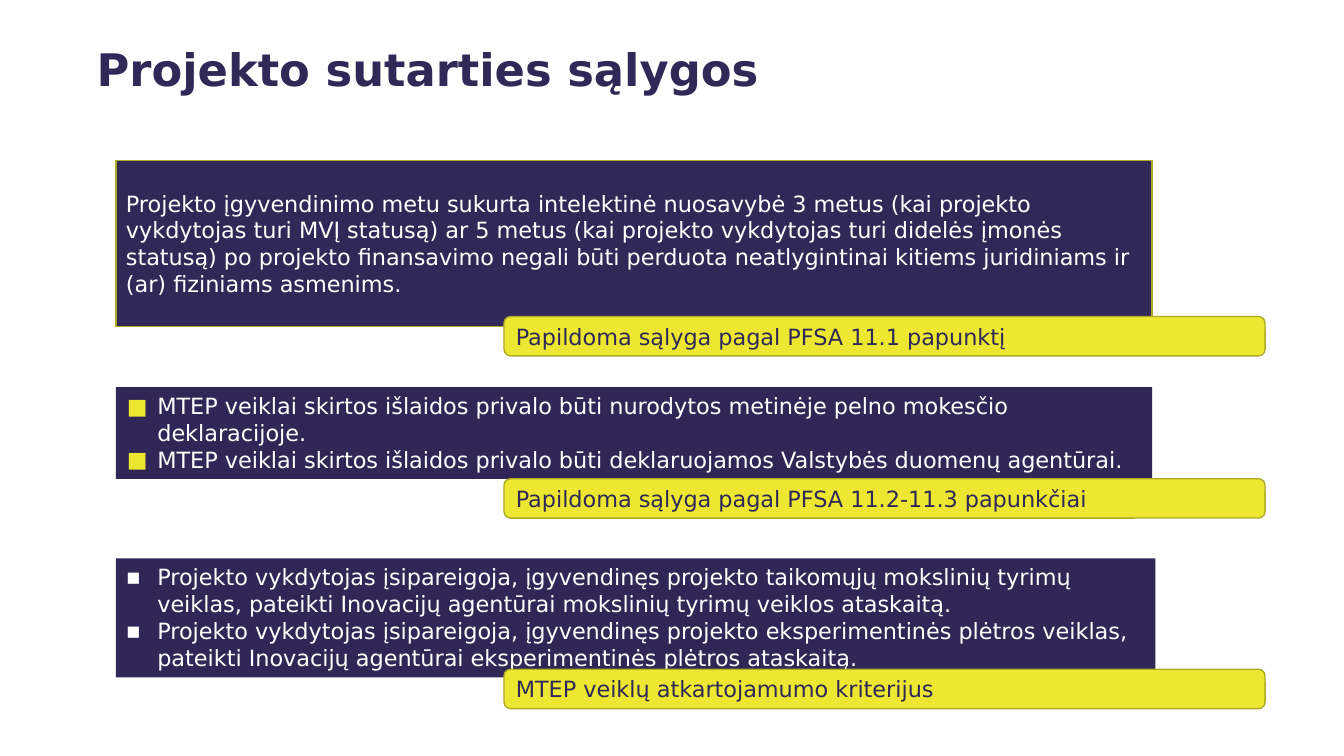
"""Build the slide on the project contract conditions."""
from dataclasses import dataclass

from lxml.etree import SubElement
from pptx import Presentation
from pptx.dml.color import RGBColor
from pptx.enum.shapes import MSO_SHAPE as Preset
from pptx.enum.text import MSO_ANCHOR as Anchor, MSO_AUTO_SIZE as AutoSize, PP_ALIGN as Align
from pptx.oxml.ns import qn
from pptx.util import Inches, Pt


@dataclass(frozen=True)
class Theme:
    font: str = "DejaVu Sans"
    navy: str = "302957"
    list_navy: str = "302757"
    yellow: str = "EDE731"
    bullet_yellow: str = "EDE630"
    olive: str = "AFAA24"
    white: str = "FFFFFF"
    title_size: int = 32
    body_size: int = 16
    line_width: int = 1
    bullet: str = "▪"
    large_bullet: int = 150


class SlideBuilder:
    PANEL_LEFT, PANEL_WIDTH = 8.63, 77.1
    TAG_LEFT, TAG_WIDTH, TAG_HEIGHT = 37.5, 56.63, 5.2
    INDENT = 2.34

    def __init__(self, presentation, theme):
        self.theme = theme
        self.width = presentation.slide_width
        self.height = presentation.slide_height
        self.slide = presentation.slides.add_slide(presentation.slide_layouts[6])

    def across(self, percent):
        return round(self.width * percent / 100)

    def box(self, left, top, width, height):
        return (self.across(left), round(self.height * top / 100),
                self.across(width), round(self.height * height / 100))

    def add_text(self, shape, texts, color, size, bold=False, anchor=Anchor.MIDDLE):
        frame = shape.text_frame
        frame.word_wrap = True
        frame.vertical_anchor = anchor
        for index, text in enumerate(texts):
            paragraph = frame.add_paragraph() if index else frame.paragraphs[0]
            paragraph.alignment = Align.LEFT
            run = paragraph.add_run()
            run.text = text
            run.font.name = self.theme.font
            run.font.size = Pt(size)
            run.font.bold = bold
            run.font.color.rgb = RGBColor.from_string(color)
        return frame

    def block(self, preset, area, fill, line=None):
        shape = self.slide.shapes.add_shape(preset, *self.box(*area))
        shape.shadow.inherit = False
        shape.fill.solid()
        shape.fill.fore_color.rgb = RGBColor.from_string(fill)
        if line:
            shape.line.color.rgb = RGBColor.from_string(line)
            shape.line.width = Pt(self.theme.line_width)
        else:
            shape.line.fill.background()
        return shape

    def add_bullet(self, paragraph, color, percent):
        properties = paragraph._p.get_or_add_pPr()
        indent = self.across(self.INDENT)
        properties.set("marL", str(indent))
        properties.set("indent", str(-indent))
        tint = SubElement(properties, qn("a:buClr"))
        SubElement(tint, qn("a:srgbClr"), val=color)
        SubElement(properties, qn("a:buSzPct"), val=str(percent * 1000))
        SubElement(properties, qn("a:buFont"), typeface=self.theme.font)
        SubElement(properties, qn("a:buChar"), char=self.theme.bullet)

    def title(self, text):
        shape = self.slide.shapes.add_textbox(*self.box(6.45, 2.67, 88.95, 12.8))
        self.add_text(shape, [text], self.theme.navy, self.theme.title_size, bold=True)

    def statement(self, top, height, text):
        area = self.PANEL_LEFT, top, self.PANEL_WIDTH, height
        shape = self.block(Preset.RECTANGLE, area, self.theme.navy, self.theme.olive)
        self.add_text(shape, [text], self.theme.white, self.theme.body_size)

    def bullet_list(self, top, height, texts, color, percent=100, width=PANEL_WIDTH):
        area = self.PANEL_LEFT, top, width, height
        shape = self.block(Preset.RECTANGLE, area, self.theme.list_navy)
        frame = self.add_text(shape, texts, self.theme.white, self.theme.body_size,
                              anchor=Anchor.TOP)
        frame.auto_size = AutoSize.SHAPE_TO_FIT_TEXT
        for paragraph in frame.paragraphs:
            self.add_bullet(paragraph, color, percent)

    def tag(self, top, text):
        area = self.TAG_LEFT, top, self.TAG_WIDTH, self.TAG_HEIGHT
        shape = self.block(Preset.ROUNDED_RECTANGLE, area, self.theme.yellow, self.theme.olive)
        self.add_text(shape, [text], self.theme.navy, self.theme.body_size)


def main():
    presentation = Presentation()
    presentation.slide_width = Inches(13.33)
    presentation.slide_height = Inches(7.5)
    theme = Theme()
    builder = SlideBuilder(presentation, theme)

    builder.title("Projekto sutarties sąlygos")
    builder.statement(
        21.2, 22,
        "Projekto įgyvendinimo metu sukurta intelektinė nuosavybė 3 metus (kai projekto "
        "vykdytojas turi MVĮ statusą) ar 5 metus (kai projekto vykdytojas turi didelės įmonės "
        "statusą) po projekto finansavimo negali būti perduota neatlygintinai kitiems "
        "juridiniams ir (ar) fiziniams asmenims.")
    builder.tag(41.87, "Papildoma sąlyga pagal PFSA 11.1 papunktį")
    builder.bullet_list(
        51.2, 12.13,
        ["MTEP veiklai skirtos išlaidos privalo būti nurodytos metinėje pelno mokesčio "
         "deklaracijoje.",
         "MTEP veiklai skirtos išlaidos privalo būti deklaruojamos Valstybės duomenų "
         "agentūrai."],
        theme.bullet_yellow, theme.large_bullet)
    builder.tag(63.33, "Papildoma sąlyga pagal PFSA 11.2-11.3 papunkčiai")
    builder.bullet_list(
        73.87, 15.73,
        ["Projekto vykdytojas įsipareigoja, įgyvendinęs projekto taikomųjų mokslinių tyrimų "
         "veiklas, pateikti Inovacijų agentūrai mokslinių tyrimų veiklos ataskaitą.",
         "Projekto vykdytojas įsipareigoja, įgyvendinęs projekto eksperimentinės plėtros "
         "veiklas, pateikti Inovacijų agentūrai eksperimentinės plėtros ataskaitą."],
        theme.white, width=77.34)
    builder.tag(88.53, "MTEP veiklų atkartojamumo kriterijus")
    presentation.save("out.pptx")


if __name__ == "__main__":
    main()
